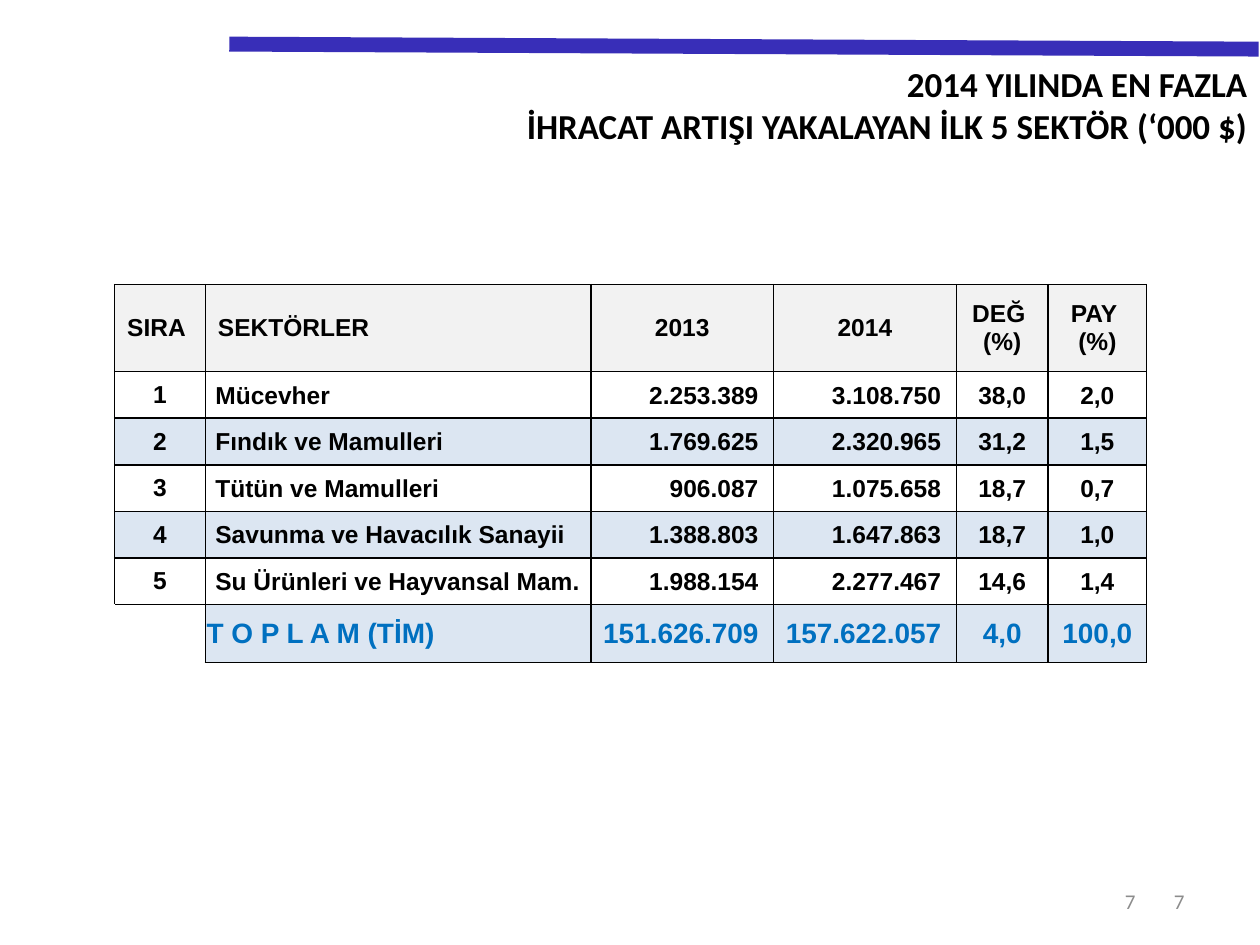
import pptx
import pptx.util
import pptx.dml.color
import pptx.enum.shapes
import pptx.enum.text
import pptx.oxml
import pptx.oxml.ns
import lxml.etree

COLORS = {"bar": "382EB8", "ink": "000000", "number": "8C8C8C",
          "header": "F2F2F2", "band": "DCE6F2", "total": "0070C0"}
ALIGN = pptx.enum.text.PP_ALIGN
MIDDLE = pptx.enum.text.MSO_ANCHOR.MIDDLE
qn = pptx.oxml.ns.qn

prs = pptx.Presentation()
prs.slide_width = pptx.util.Inches(10)
prs.slide_height = pptx.util.Inches(7.5)
COL = prs.slide_width / 100
ROW = prs.slide_height / 75
s = prs.slides.add_slide(prs.slide_layouts[6])


def write(tf, text, align, size, color="ink", name="Arial", bold=True):
    for i, line in enumerate(text.split("\n")):
        p = tf.paragraphs[0] if i == 0 else tf.add_paragraph()
        p.alignment = align
        r = p.add_run()
        r.text = line
        form = {"size": pptx.util.Pt(size), "name": name, "bold": bold}
        for key, value in form.items():
            setattr(r.font, key, value)
        r.font.color.rgb = pptx.dml.color.RGBColor.from_string(COLORS[color])


def border(cell, sides):
    tcPr = cell._tc.get_or_add_tcPr()
    for i, side in enumerate(sides):
        ln = pptx.oxml.parse_xml(
            f'<a:ln{side} {pptx.oxml.ns.nsdecls("a")} w="12700"><a:solidFill>'
            f'<a:srgbClr val="{COLORS["ink"]}"/></a:solidFill></a:ln{side}>')
        tcPr.insert(i, ln)


bar = s.shapes.add_connector(pptx.enum.shapes.MSO_CONNECTOR.STRAIGHT,
                             int(18.2 * COL), int(3.5 * ROW), int(99.9 * COL), int(3.9 * ROW))
bar.line.width = pptx.util.Pt(8.5)
bar.line.color.rgb = pptx.dml.color.RGBColor.from_string(COLORS["bar"])
lxml.etree.SubElement(bar._element.spPr, qn("a:effectLst"))

title = "2014 YILINDA EN FAZLA\nİHRACAT ARTIŞI YAKALAYAN İLK 5 SEKTÖR (‘000 $)"
boxes = [
    (71.7, 69.5, 23.3, 4, "7", 12, "number", False, MIDDLE),
    (70.1, 69.5, 21, 4, "7", 12, "number", False, MIDDLE),
    (10.6, 4.5, 89.4, 7.7, title, 20, "ink", True, pptx.enum.text.MSO_ANCHOR.TOP),
]
for x, y, w, h, text, size, color, bold, anchor in boxes:
    sp = s.shapes.add_textbox(int(x * COL), int(y * ROW), int(w * COL), int(h * ROW))
    tf = sp.text_frame
    tf.word_wrap = True
    tf.vertical_anchor = anchor
    write(tf, text, ALIGN.RIGHT, size, color, "Calibri", bold)

data = [
    ["SIRA", "SEKTÖRLER", "2013", "2014", "DEĞ \n(%)", "PAY \n(%)"],
    ["1", "Mücevher", "2.253.389", "3.108.750", "38,0", "2,0"],
    ["2", "Fındık ve Mamulleri", "1.769.625", "2.320.965", "31,2", "1,5"],
    ["3", "Tütün ve Mamulleri", "906.087", "1.075.658", "18,7", "0,7"],
    ["4", "Savunma ve Havacılık Sanayii", "1.388.803", "1.647.863", "18,7", "1,0"],
    ["5", "Su Ürünleri ve Hayvansal Mam.", "1.988.154", "2.277.467", "14,6", "1,4"],
    ["", "T O P L A M (TİM)", "151.626.709", "157.622.057", "4,0", "100,0"],
]
widths = [7.2, 30.6, 14.5, 14.5, 7.3, 7.8]
heights = [6.9] + [3.7] * 5 + [4.6]
header_align = [ALIGN.LEFT] * 2 + [ALIGN.CENTER] * 4
body_align = [ALIGN.CENTER, ALIGN.LEFT, ALIGN.RIGHT, ALIGN.RIGHT, ALIGN.CENTER, ALIGN.CENTER]
last = len(data) - 1

tbl = s.shapes.add_table(len(data), len(widths), int(9.1 * COL), int(22.6 * ROW),
                         int(sum(widths) * COL), int(sum(heights) * ROW)).table
tbl.first_row = False
tbl.horz_banding = False
for column, w in zip(tbl.columns, widths):
    column.width = int(w * COL)
for row, h in zip(tbl.rows, heights):
    row.height = int(h * ROW)

for i, values in enumerate(data):
    for j, text in enumerate(values):
        cell = tbl.cell(i, j)
        cell.vertical_anchor = MIDDLE
        align = body_align[j] if i else header_align[j]
        if i and j:
            insets = {"margin_left": 0.8 if j == 1 and i < last else 0.1,
                      "margin_right": 1.2 if align == ALIGN.RIGHT else 0.1,
                      "margin_top": 0.1, "margin_bottom": 0}
            for key, value in insets.items():
                setattr(cell, key, int(value * COL))
        if text:
            total = i == last
            write(cell.text_frame, text, align, 16 if total else 14, "total" if total else "ink")
        if text and i % 2 == 0:
            cell.fill.solid()
            cell.fill.fore_color.rgb = pptx.dml.color.RGBColor.from_string(
                COLORS["band" if i else "header"])
        else:
            cell.fill.background()
        border(cell, "LRTB" if text else "RT")

prs.save("out.pptx")
